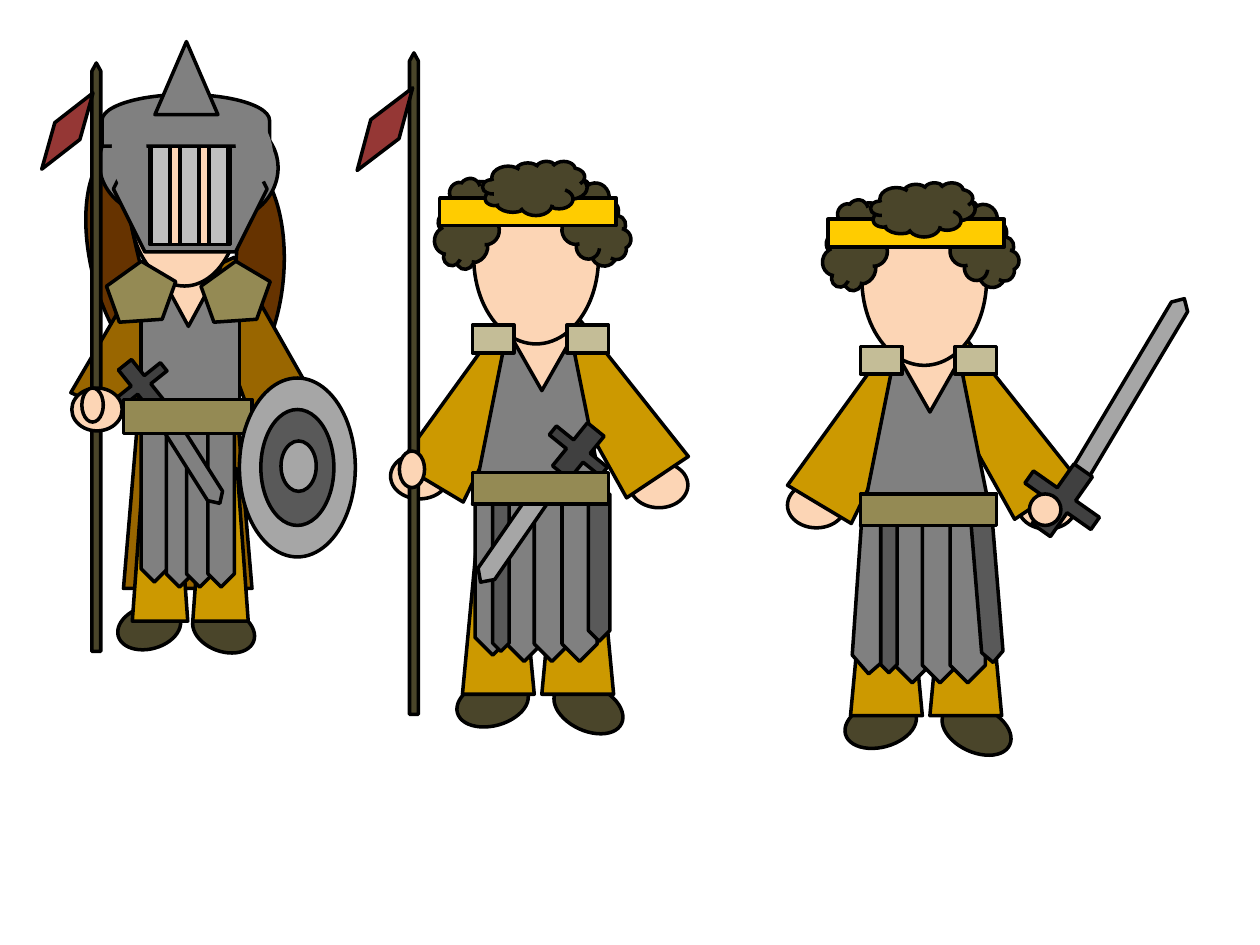
from dataclasses import dataclass

from pptx import Presentation
from pptx.dml.color import RGBColor
from pptx.enum.shapes import MSO_SHAPE as M
from pptx.util import Inches, Pt


@dataclass(frozen=True)
class Theme:
    outline: str = "000000"
    outline_pt: float = 2
    skin: str = "FCD5B5"
    sleeve: str = "CC9900"
    robe: str = "996600"
    armour: str = "808080"
    dark_armour: str = "595959"
    blade: str = "A6A6A6"
    visor_bar: str = "BFBFBF"
    hilt: str = "404040"
    dark_brown: str = "4A452A"
    long_hair: str = "663300"
    belt: str = "948A54"
    pad: str = "C4BD97"
    headband: str = "FFCC00"
    flag: str = "953735"


T = Theme()
SLEEVE = M.FLOWCHART_MANUAL_OPERATION


class Figure:
    """A group whose pieces are placed in inches from the corner of its box."""

    def __init__(self, slide, left, top):
        self.shapes = slide.shapes.add_group_shape().shapes
        self.left, self.top = left, top

    def add(self, kind, x, y, w, h, fill, rot=0, flip=None, adj=None, line=T.outline):
        s = self.shapes.add_shape(kind, Inches(self.left + x), Inches(self.top + y),
                                  Inches(w), Inches(h))
        s.shadow.inherit = False
        s.fill.solid()
        s.fill.fore_color.rgb = RGBColor.from_string(fill)
        s.line.color.rgb = RGBColor.from_string(line)
        s.line.width = Pt(T.outline_pt)
        s.rotation = rot
        if adj is not None:
            s.adjustments[0] = adj
        if flip:
            s._element.spPr.get_or_add_xfrm().set("flip" + flip, "1")

    def upright(self, x, y, w, h, fill, rot=90, **options):
        """Stand an arrow plate on end; x, y, w, h are its box as seen."""
        self.add(M.PENTAGON, x + (w - h) / 2, y + (h - w) / 2, h, w, fill, rot, **options)


def upper_body(f, left_hand):
    for x, y in (left_hand, (2, 2.67)):
        f.add(M.OVAL, x, y, 0.46, 0.36, T.skin)
    f.add(SLEEVE, 1.52, 1.46, 0.59, 1.45, T.sleeve, 146.2)
    f.add(SLEEVE, 0.48, 1.56, 0.59, 1.37, T.sleeve, 210.9)
    f.add(M.TRAPEZOID, 0.75, 1.58, 1.05, 1.42, T.armour, adj=0.271)
    f.add(M.OVAL, 1.38, 4.44, 0.58, 0.36, T.dark_brown, 204.9, "H")
    f.add(M.OVAL, 0.62, 4.4, 0.58, 0.36, T.dark_brown, 344.3, "H")
    f.add(M.ISOSCELES_TRIANGLE, 1.01, 1.59, 0.58, 0.51, T.skin, 180)


def head(f):
    f.add(M.OVAL, 0.76, 0.36, 0.99, 1.37, T.skin)
    f.add(M.CLOUD, 0.36, 0.53, 0.72, 0.5, T.dark_brown, 294.2)
    f.add(M.CLOUD, 1.34, 0.52, 0.72, 0.5, T.dark_brown, 69.7)
    f.add(M.RECTANGLE, 0.49, 0.57, 1.4, 0.22, T.headband)
    f.add(M.CLOUD, 0.83, 0.28, 0.83, 0.43, T.dark_brown)
    for x in (1.5, 0.75):
        f.add(M.RECTANGLE, x, 1.58, 0.33, 0.22, T.pad)


def legs_and_skirt(f, first_strip, first_rot=90, side_rot=90):
    for x in (1.3, 0.67):
        f.add(SLEEVE, x, 3.3, 0.57, 1.21, T.sleeve, 180)
    f.upright(*first_strip, 0.28, 1.33, T.armour, first_rot)
    for i in range(3):
        f.upright(1.02 + 0.22 * i, 2.92, 0.28, 1.33, T.armour)
    f.upright(1.67, 2.92, 0.17, 1.17, T.dark_armour, side_rot)
    f.upright(0.91, 2.84, 0.13, 1.33, T.dark_armour)


def belt(f):
    f.add(M.RECTANGLE, 0.75, 2.75, 1.08, 0.25, T.belt)


def spearman(slide, left, top):
    f = Figure(slide, left, top)
    upper_body(f, (0.1, 2.6))
    f.add(M.CROSS, 1.33, 2.36, 0.52, 0.44, T.hilt, 39, adj=0.398)
    f.upright(0.25, -0.58, 0.07, 5.25, T.dark_brown, 270, flip="V", adj=0.909)
    f.add(M.OVAL, 0.17, 2.58, 0.2, 0.29, T.skin)
    f.add(M.FLOWCHART_DECISION, -0.34, -0.11, 0.79, 0.27, T.flag, 303.9)
    head(f)
    legs_and_skirt(f, (0.77, 2.87))
    f.add(M.PENTAGON, 0.62, 3.17, 0.9, 0.16, T.blade, 124.7)
    belt(f)


def swordsman(slide, left, top):
    f = Figure(slide, left, top)
    upper_body(f, (0.17, 2.66))
    head(f)
    legs_and_skirt(f, (0.72, 2.85), first_rot=94, side_rot=85.3)
    f.add(M.PENTAGON, 2.08, 1.83, 1.64, 0.15, T.blade, 300.8)
    f.add(M.CROSS, 2.03, 2.51, 0.64, 0.58, T.hilt, 215.1, adj=0.398)
    belt(f)
    f.add(M.OVAL, 2.09, 2.75, 0.25, 0.25, T.skin)


def knight_body(f):
    f.add(M.MOON, 0.23, 0.89, 0.44, 1.87, T.long_hair, 166.1, "H", 0.875)
    f.add(M.MOON, 1.31, 0.97, 0.44, 1.83, T.long_hair, 184.8, adj=0.875)
    f.add(M.OVAL, 0.43, 4.51, 0.51, 0.34, T.dark_brown, 344.3, "H")
    f.add(M.OVAL, 1.02, 4.53, 0.51, 0.34, T.dark_brown, 20.7, "H")
    f.add(SLEEVE, 0.48, 1.95, 1.02, 2.42, T.robe, 180)
    f.add(SLEEVE, 1.22, 1.75, 0.52, 1.25, T.robe, 155.2)
    f.add(SLEEVE, 0.28, 1.84, 0.52, 1.14, T.robe, 205.1)
    f.add(M.RECTANGLE, 0.62, 1.87, 0.78, 1.17, T.armour)
    f.add(M.ISOSCELES_TRIANGLE, 0.74, 1.82, 0.51, 0.47, T.skin, 180)
    f.add(M.OVAL, 0.53, 0.69, 0.87, 1.28, T.skin)


def knight_helmet(f):
    f.add(M.MOON, 0.29, 0.56, 0.44, 0.81, T.armour, 189.3, "H", 0.875)
    f.add(M.MOON, 1.26, 0.58, 0.44, 0.81, T.armour, 162.5, adj=0.875)
    f.add(M.HEXAGON, 0.4, 0.7, 1.22, 1, T.armour)
    f.add(M.RECTANGLE, 0.69, 0.77, 0.64, 0.87, T.skin)
    for i in range(3):
        f.add(M.RECTANGLE, 0.7 + 0.23 * i, 0.77, 0.15, 0.87, T.visor_bar)
    f.add(M.FLOWCHART_DELAY, 0.77, -0.01, 0.41, 1.33, T.armour, 270)
    f.add(M.ISOSCELES_TRIANGLE, 0.73, 0.03, 0.5, 0.58, T.armour)
    f.add(M.OVAL, 0.4, 0.62, 0.25, 0.58, T.armour, line=T.armour)
    f.add(M.OVAL, 1.39, 0.64, 0.26, 0.5, T.armour, 349.8, line=T.armour)
    for x in (0.4, 1.15):
        f.add(M.REGULAR_PENTAGON, x, 1.76, 0.49, 0.53, T.belt, 70.2)


def knight_arms_and_skirt(f):
    f.upright(0.23, 0.2, 0.07, 4.67, T.dark_brown, 270, adj=0.909)
    f.add(M.FLOWCHART_DECISION, -0.33, 0.62, 0.73, 0.24, T.flag, 303.9)
    f.add(M.CROSS, 0.39, 2.55, 0.46, 0.41, T.hilt, 321.4, adj=0.398)
    f.add(M.OVAL, 0.07, 2.78, 0.4, 0.34, T.skin)
    for x in (1.03, 0.55):
        f.add(SLEEVE, x, 3.42, 0.44, 1.21, T.sleeve, 180)
    for x, y in ((0.62, 2.99), (0.82, 3.03), (0.98, 3.03), (1.15, 3.03)):
        f.upright(x, y, 0.21, 1.33, T.armour)
    f.add(M.OVAL, 0.15, 2.78, 0.17, 0.27, T.skin)
    f.add(M.PENTAGON, 0.6, 3.27, 0.84, 0.14, T.armour, 57.7)
    f.add(M.RECTANGLE, 0.48, 2.87, 1.02, 0.27, T.belt)


def shield(f):
    f.add(M.OVAL, 1.4, 2.7, 0.92, 1.42, T.blade)
    f.add(M.OVAL, 1.57, 2.95, 0.58, 0.92, T.dark_armour)
    f.add(M.OVAL, 1.73, 3.2, 0.28, 0.4, T.blade)


def knight(slide, left, top):
    f = Figure(slide, left, top)
    knight_body(f)
    knight_helmet(f)
    knight_arms_and_skirt(f)
    shield(f)


def main():
    prs = Presentation()
    prs.slide_width, prs.slide_height = Inches(10), Inches(7.5)
    slide = prs.slides.add_slide(prs.slide_layouts[6])
    spearman(slide, 3, 1)
    knight(slide, 0.5, 0.3)
    swordsman(slide, 6.08, 1.17)
    prs.save("out.pptx")


if __name__ == "__main__":
    main()
